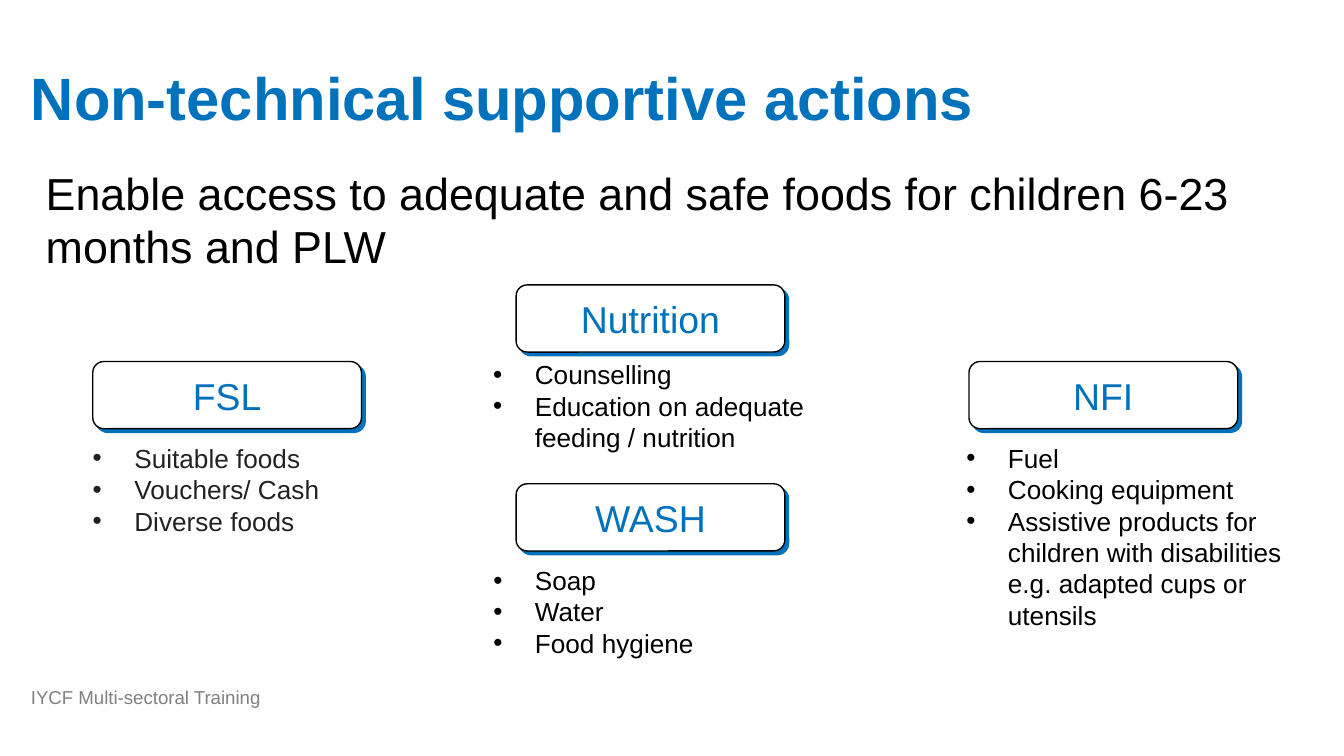
import pptx
import pptx.util
import pptx.dml.color
import pptx.enum.shapes
import pptx.enum.text
import lxml.etree

Inches, Pt = pptx.util.Inches, pptx.util.Pt
ANCHOR = pptx.enum.text.MSO_ANCHOR
ALIGN = pptx.enum.text.PP_ALIGN

# Content
TITLE = "Non-technical supportive actions"
AIM = "Enable access to adequate and safe foods for children 6-23 months and PLW"
FOOTER = "IYCF Multi-sectoral Training"
# sector, column, label top, list top, list width, list colour, actions
SECTORS = [
    ("Nutrition", "middle", 2.12, 2.67, 2.64, "black",
     ["Counselling", "Education on adequate feeding / nutrition"]),
    ("FSL", "left", 2.69, 3.29, 2, "charcoal",
     ["Suitable foods", "Vouchers/ Cash", "Diverse foods"]),
    ("NFI", "right", 2.69, 3.29, 2.64, "black",
     ["Fuel", "Cooking equipment",
      "Assistive products for children with disabilities e.g. adapted cups or utensils"]),
    ("WASH", "middle", 3.6, 4.2, 2.82, "black",
     ["Soap", "Water", "Food hygiene"]),
]

# Format
COLORS = {"blue": "0072BC", "black": "000000", "charcoal": "222221",
          "grey": "808080", "white": "FFFFFF"}
SLIDE_WIDTH = 10
SLIDE_HEIGHT = SLIDE_WIDTH * 9 / 16
COLUMNS = {"left": (0.69, 0.69), "middle": (3.84, 3.67), "right": (7.21, 7.19)}
LABEL_SIZE = (2, 0.5)
LIST_HEIGHTS = {"Nutrition": 0.71, "FSL": 0.71, "NFI": 1.41, "WASH": 0.71}
INDENT = 0.31
SIDES = ("left", "top", "width", "height")


def rgb(name):
    return pptx.dml.color.RGBColor.from_string(COLORS[name])


def set_all(target, **values):
    for name, value in values.items():
        setattr(target, name, value)


def place(shape, *box):
    set_all(shape, **{side: Inches(length) for side, length in zip(SIDES, box)})


def set_frame(shape, anchor=ANCHOR.TOP, insets=(0, 0, 0, 0)):
    frame = shape.text_frame
    margins = ("margin_left", "margin_top", "margin_right", "margin_bottom")
    set_all(frame, word_wrap=True, auto_size=pptx.enum.text.MSO_AUTO_SIZE.NONE,
            vertical_anchor=anchor,
            **{side: Inches(inset) for side, inset in zip(margins, insets)})
    return frame


def write(paragraph, text, size, color, bold=False, align=ALIGN.LEFT, spacing=1.0):
    paragraph.text = text
    set_all(paragraph, alignment=align, line_spacing=spacing, space_before=Pt(0))
    set_all(paragraph.font, name="Arial", size=Pt(size), bold=bold)
    paragraph.font.color.rgb = rgb(color)


def add_drawing(parent, tag, **attributes):
    name = pptx.oxml.ns.qn(tag)
    return lxml.etree.SubElement(parent, name, attributes)


def set_bullet(paragraph, char=None, indent=0):
    properties = paragraph._p.get_or_add_pPr()
    properties.set("marL", str(Inches(indent)))
    properties.set("indent", str(-Inches(indent)))
    if char:
        add_drawing(properties, "a:buFont", typeface="Arial")
        add_drawing(properties, "a:buChar", char=char)
    else:
        add_drawing(properties, "a:buNone")


def add_label(slide, text, left, top):
    label = slide.shapes.add_shape(
        pptx.enum.shapes.MSO_SHAPE.ROUNDED_RECTANGLE,
        *map(Inches, (left, top) + LABEL_SIZE))
    label.adjustments[0] = 0.167
    label.fill.solid()
    label.fill.fore_color.rgb = rgb("white")
    label.line.color.rgb = rgb("black")
    label.line.width = Pt(0.75)
    # Hard blue shadow, down and to the right
    label.shadow.inherit = False
    effects = label._element.spPr.find(pptx.oxml.ns.qn("a:effectLst"))
    shadow = add_drawing(effects, "a:outerShdw", blurRad="0", dist=str(Pt(2.8)),
                         dir=str(45 * 60000), algn="ctr", rotWithShape="0")
    add_drawing(shadow, "a:srgbClr", val=COLORS["blue"])
    frame = set_frame(label, ANCHOR.MIDDLE, (0.1, 0.05, 0.1, 0.05))
    write(frame.paragraphs[0], text, 20, "blue", align=ALIGN.CENTER)


def add_actions(slide, actions, box, color):
    action_list = slide.shapes.add_textbox(*map(Inches, box))
    frame = set_frame(action_list)
    for number, action in enumerate(actions):
        paragraph = frame.add_paragraph() if number else frame.paragraphs[0]
        set_bullet(paragraph, "•", INDENT)
        write(paragraph, action, 14, color)


def main():
    deck = pptx.Presentation()
    set_all(deck, slide_width=Inches(SLIDE_WIDTH), slide_height=Inches(SLIDE_HEIGHT))
    slide = deck.slides.add_slide(deck.slide_layouts[1])

    # Title and aim
    title, aim = slide.shapes.title, slide.placeholders[1]
    place(title, 0.23, 0.22, 9.53, 1.06)
    write(set_frame(title, ANCHOR.MIDDLE).paragraphs[0], TITLE, 32, "blue",
          bold=True, spacing=0.9)
    place(aim, 0.24, 1.18, 9.53, 2.77)
    aim_line = set_frame(aim, insets=(0.1, 0.05, 0.1, 0)).paragraphs[0]
    set_bullet(aim_line)
    write(aim_line, AIM, 24, "black")

    # Footer
    footer = slide.shapes.add_textbox(*map(Inches, (0.23, 5.02, 4.62, 0.25)))
    write(set_frame(footer, ANCHOR.BOTTOM).paragraphs[0], FOOTER, 10, "grey")

    # Sectors with their actions
    for sector, column, label_top, list_top, width, color, actions in SECTORS:
        label_left, list_left = COLUMNS[column]
        list_box = (list_left, list_top, width, LIST_HEIGHTS[sector])
        add_actions(slide, actions, list_box, color)
        add_label(slide, sector, label_left, label_top)

    deck.save("out.pptx")


if __name__ == "__main__":
    main()
